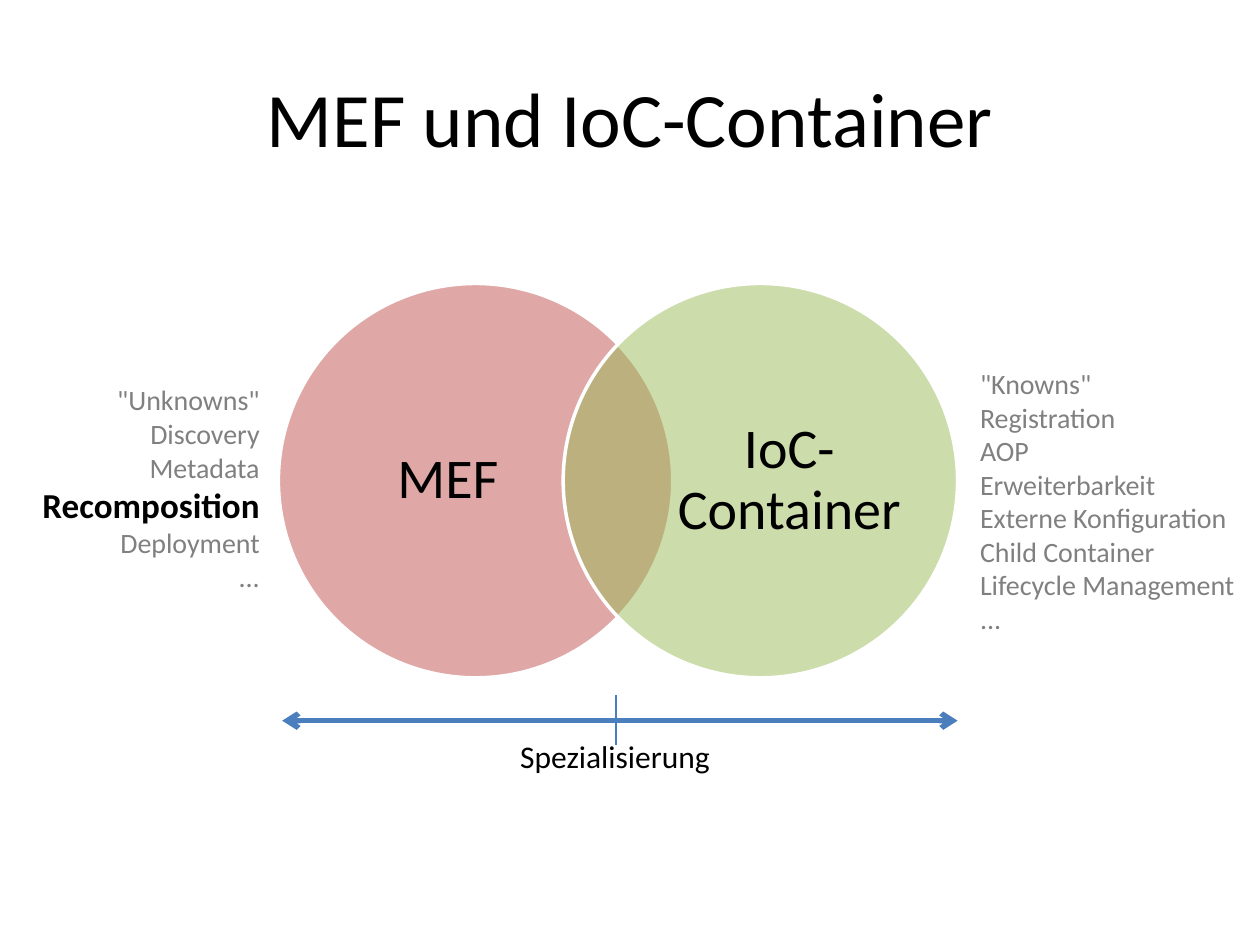
import pptx
import pptx.util
import pptx.dml.color
import pptx.enum.shapes
import pptx.enum.text
import pptx.oxml.ns
from lxml import etree

Inches = pptx.util.Inches
Pt = pptx.util.Pt
ALIGN = pptx.enum.text.PP_ALIGN
ANCHOR = pptx.enum.text.MSO_ANCHOR
qn = pptx.oxml.ns.qn

COLORS = {"black": "000000", "gray": "808080", "white": "FFFFFF",
          "mef": "C0504D", "ioc": "9BBB59", "arrow": "4B7EBC"}
KNOWNS = ['"Knowns"', "Registration", "AOP", "Erweiterbarkeit",
          "Externe Konfiguration", "Child Container", "Lifecycle Management", "..."]
UNKNOWNS = ['"Unknowns"', "Discovery", "Metadata", "Recomposition", "Deployment", "..."]
HIGHLIGHT = "Recomposition"
CIRCLE_TOP, CIRCLE_SIZE = 2.25, 3.13


def rgb(name):
    return pptx.dml.color.RGBColor.from_string(COLORS[name])


def place(sp, left, top, width, height):
    sp.left, sp.top, sp.width, sp.height = map(Inches, (left, top, width, height))


def write(p, text, size=18, color="black", bold=False, align=ALIGN.LEFT):
    """Fill a paragraph; a vertical tab in the text is a line break."""
    p.text = text
    p.alignment = align
    for r in p.runs:
        r.font.name = "Calibri"
        r.font.size = Pt(size)
        r.font.bold = bold
        r.font.color.rgb = rgb(color)


def add_title(s, text):
    title = s.shapes.title
    place(title, 0.5, 0.3, 9, 1.25)
    title.text_frame.vertical_anchor = ANCHOR.MIDDLE
    write(title.text_frame.paragraphs[0], text, size=44, align=ALIGN.CENTER)


def add_circle(s, left, color):
    sp = s.shapes.add_shape(pptx.enum.shapes.MSO_SHAPE.OVAL, Inches(left), Inches(CIRCLE_TOP),
                            Inches(CIRCLE_SIZE), Inches(CIRCLE_SIZE))
    sp.shadow.inherit = False
    sp.fill.solid()
    sp.fill.fore_color.rgb = rgb(color)
    clr = sp.fill._xPr.find(qn("a:solidFill"))[0]
    etree.SubElement(clr, qn("a:alpha")).set("val", "50000")
    sp.line.color.rgb = rgb("white")
    sp.line.width = Pt(2)


def add_circle_label(s, left, text):
    tf = s.shapes.add_textbox(Inches(left), Inches(2.62), Inches(1.81), Inches(2.39)).text_frame
    tf.word_wrap = True
    tf.vertical_anchor = ANCHOR.MIDDLE
    tf.margin_left = tf.margin_right = tf.margin_top = tf.margin_bottom = 0
    p = tf.paragraphs[0]
    write(p, text, size=32, align=ALIGN.CENTER)
    p.line_spacing = 0.9


def add_lines(s, box, lines, **fmt):
    """Add an unwrapped text box with one paragraph per line."""
    tf = s.shapes.add_textbox(*map(Inches, box)).text_frame
    tf.word_wrap = False
    tf.auto_size = pptx.enum.text.MSO_AUTO_SIZE.SHAPE_TO_FIT_TEXT
    for i, line in enumerate(lines):
        p = tf.add_paragraph() if i else tf.paragraphs[0]
        if line == HIGHLIGHT:
            write(p, line, **{**fmt, "size": 20, "color": "black", "bold": True})
        else:
            write(p, line, **fmt)


def add_line(s, start, end, width, arrows=False):
    c = s.shapes.add_connector(pptx.enum.shapes.MSO_CONNECTOR.STRAIGHT,
                               *map(Inches, (*start, *end)))
    c.line.color.rgb = rgb("arrow")
    c.line.width = Pt(width)
    if arrows:
        for tag in ("a:headEnd", "a:tailEnd"):
            etree.SubElement(c.line._ln, qn(tag)).set("type", "arrow")
    etree.SubElement(c._element.spPr, qn("a:effectLst"))


def main():
    prs = pptx.Presentation()
    prs.slide_width, prs.slide_height = Inches(10), Inches(7.5)
    s = prs.slides.add_slide(prs.slide_layouts[5])
    add_title(s, "MEF und IoC-Container")

    add_circle(s, 2.21, "mef")
    add_circle_label(s, 2.65, "MEF")
    add_circle(s, 4.47, "ioc")
    add_circle_label(s, 5.36, "IoC-\vContainer")

    add_line(s, (2.24, 5.72), (7.6, 5.72), 3, arrows=True)
    add_lines(s, (4.03, 5.8, 1.72, 0.4), ["Spezialisierung"])
    add_lines(s, (7.68, 2.86, 2.24, 2.26), KNOWNS, size=16, color="gray")
    add_lines(s, (0.22, 2.99, 1.94, 2.12), UNKNOWNS, size=16, color="gray", align=ALIGN.RIGHT)
    add_line(s, (4.89, 5.52), (4.89, 5.91), 0.75)
    prs.save("out.pptx")


if __name__ == "__main__":
    main()
